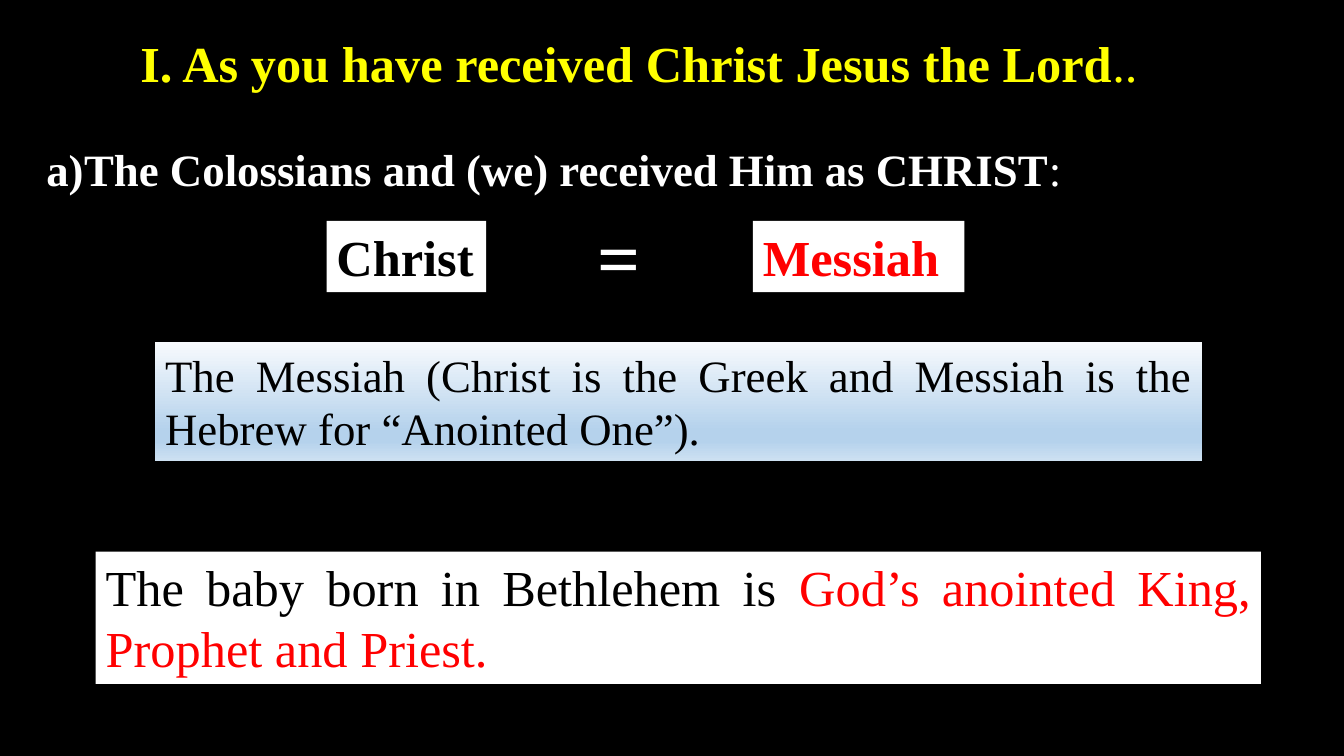
from lxml import etree
from pptx import Presentation
from pptx.dml.color import RGBColor
from pptx.enum.shapes import MSO_SHAPE
from pptx.enum.text import MSO_ANCHOR, MSO_AUTO_SIZE, PP_ALIGN
from pptx.oxml.ns import qn
from pptx.util import Pt

FONT = "Times New Roman"
BLACK, WHITE, RED, YELLOW = "000000", "FFFFFF", "FF0000", "FFFF00"
BLUE_STOPS = [(0, "F7FAFD"), (74, "B5D2EC"), (83, "B5D2EC"), (100, "CEE1F2")]


def color(value):
    return RGBColor.from_string(value)


def write(shape, parts, size, bold=False, align=PP_ALIGN.LEFT):
    frame = shape.text_frame
    frame.word_wrap = True
    frame.auto_size = MSO_AUTO_SIZE.NONE
    frame.vertical_anchor = MSO_ANCHOR.TOP
    para = frame.paragraphs[0]
    para.alignment = align
    para.font.name = FONT
    para.font.size = Pt(size)
    para.font.bold = bold
    for text, tint, strong in parts:
        span = para.add_run()
        span.text = text
        span.font.name = FONT
        span.font.size = Pt(size)
        span.font.bold = strong
        span.font.color.rgb = color(tint)
    return para


def add_panel(page, box, fill=WHITE):
    panel = page.shapes.add_shape(MSO_SHAPE.RECTANGLE, *map(Pt, box))
    panel.shadow.inherit = False
    panel.line.fill.background()
    panel.fill.solid()
    panel.fill.fore_color.rgb = color(fill)
    return panel


def fill_gradient(shape, stops):
    shape.fill.gradient()
    shape.fill.gradient_angle = 270
    stop_list = shape.element.spPr.find(qn("a:gradFill")).find(qn("a:gsLst"))
    for stop in list(stop_list):
        stop_list.remove(stop)
    for percent, tint in stops:
        stop = etree.SubElement(stop_list, qn("a:gs"), pos=str(percent * 1000))
        etree.SubElement(stop, qn("a:srgbClr"), val=tint)


def add_title(page, box):
    title = page.shapes.title
    title.left, title.top, title.width, title.height = map(Pt, box)
    para = write(title, [("I. As you have received Christ Jesus the Lord", YELLOW, True),
                         ("..", YELLOW, False)], 36)
    para.line_spacing = 1.0
    para.space_before = Pt(0)


def add_point(page, box):
    point = page.shapes.add_textbox(*map(Pt, box))
    para = write(point, [("The Colossians and (we) received Him as CHRIST", WHITE, True),
                         (":", WHITE, False)], 32, True, PP_ALIGN.JUSTIFY)
    para.space_before = Pt(12)
    properties = para._p.get_or_add_pPr()
    properties.set("marL", str(Pt(27)))
    properties.set("indent", str(Pt(-27)))
    etree.SubElement(properties, qn("a:buFont"), typeface=FONT)
    etree.SubElement(properties, qn("a:buAutoNum"), type="alphaLcParenR")
    run_defaults = properties.find(qn("a:defRPr"))
    properties.append(run_defaults)


def add_equation(page, box):
    left, top, width, height = box
    for text, tint, offset, panel_width in [("Christ", BLACK, 0, 114),
                                            ("Messiah", RED, width - 151, 151)]:
        panel = add_panel(page, (left + offset, top, panel_width, height))
        write(panel, [(text, tint, True)], 36, True)
    sign = page.shapes.add_textbox(Pt(left + 186.5), Pt(top - 11), Pt(46), Pt(73))
    write(sign, [("=", WHITE, True)], 54, True)


def add_meaning(page, box):
    panel = add_panel(page, box)
    fill_gradient(panel, BLUE_STOPS)
    text = "The Messiah (Christ is the Greek and Messiah is the Hebrew for “Anointed One”)."
    write(panel, [(text, BLACK, False)], 32, align=PP_ALIGN.JUSTIFY)


def add_conclusion(page, box):
    para = write(add_panel(page, box), [
        ("The baby born in Bethlehem is ", BLACK, False),
        ("God’s anointed King, Prophet and Priest.", RED, False),
    ], 36, align=PP_ALIGN.JUSTIFY)
    para.space_before = Pt(12)


def main():
    deck = Presentation()
    deck.slide_width, deck.slide_height = Pt(960), Pt(540)
    page = deck.slides.add_slide(deck.slide_layouts[5])
    page.background.fill.solid()
    page.background.fill.fore_color.rgb = color(BLACK)
    add_title(page, (93, 19.5, 734, 51))
    add_point(page, (26, 98, 746, 46))
    add_equation(page, (233.3, 157.7, 455.5, 51))
    add_meaning(page, (110.9, 244.5, 748, 85))
    add_conclusion(page, (68.4, 394, 832.3, 94.5))
    deck.save("out.pptx")


if __name__ == "__main__":
    main()
